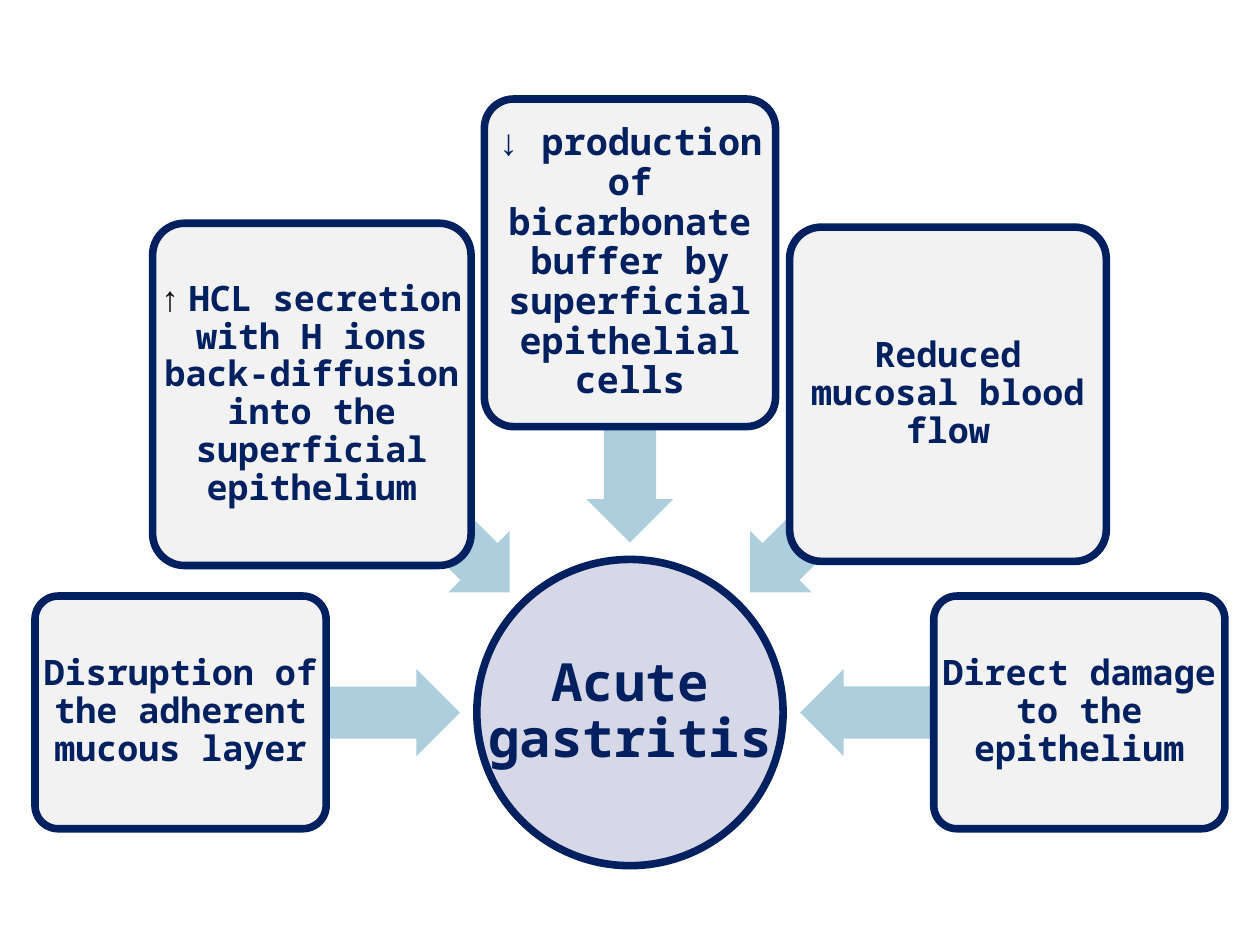
from math import cos, radians, sin

from pptx import Presentation
from pptx.dml.color import RGBColor
from pptx.enum.shapes import MSO_SHAPE
from pptx.enum.text import MSO_ANCHOR, PP_ALIGN
from pptx.util import Pt

ELLIPSE, ROUND_RECT, ARROW = MSO_SHAPE.OVAL, MSO_SHAPE.ROUNDED_RECTANGLE, MSO_SHAPE.LEFT_ARROW
MIDDLE, CENTER = MSO_ANCHOR.MIDDLE, PP_ALIGN.CENTER

COLORS = {"navy": "002060", "hub": "D7D8E7", "box": "F2F2F2", "arrow": "ADCEDC", "ink": "0D0D0D"}
MONO = "Noto Sans Mono"

HUB_X, HUB_Y, HUB_SIZE = 360, 407.2, 175
ARROW_W, ARROW_H, ARROW_RADIUS = 159.8, 49.7, 177.1

# angle around the hub, box (left, top, width, height), runs (text, size, font, colour)
CAUSES = [
    (180, (20, 340.6, 166.4, 133),
     [("Disruption of the adherent mucous layer", 20, MONO, "navy")]),
    (225, (87.2, 127.6, 182, 195.6),
     [("↑ ", 20, "Arial", "ink"),
      ("HCL secretion with H ions back-diffusion into the superficial epithelium", 20, MONO, "navy")]),
    (270, (276.8, 56.6, 166.4, 187.2),
     [("↓ production of bicarbonate buffer by superficial epithelial cells", 21, MONO, "navy")]),
    (315, (451.2, 129.8, 181, 191),
     [("Reduced mucosal blood flow", 20, MONO, "navy")]),
    (0, (533.6, 340.6, 166.4, 133),
     [("Direct damage to the epithelium", 20, MONO, "navy")]),
]


def add_shape(kind, box, fill, adjustments=(), outlined=True):
    sp = s.shapes.add_shape(kind, *map(Pt, box))
    sp.shadow.inherit = False
    sp.fill.solid()
    sp.fill.fore_color.rgb = RGBColor.from_string(COLORS[fill])
    for i, value in enumerate(adjustments):
        sp.adjustments[i] = value
    if outlined:
        sp.line.color.rgb = RGBColor.from_string(COLORS["navy"])
        sp.line.width = Pt(4.33)
    else:
        sp.line.fill.background()
    return sp


def add_label(box, runs, inset):
    tf = s.shapes.add_textbox(*map(Pt, box)).text_frame
    frame_format = {"word_wrap": True, "vertical_anchor": MIDDLE}
    frame_format.update({f"margin_{side}": Pt(inset) for side in ("left", "top", "right", "bottom")})
    for name, value in frame_format.items():
        setattr(tf, name, value)
    p = tf.paragraphs[0]
    p.alignment = CENTER
    p.line_spacing = 0.9
    for text, size, font, color in runs:
        r = p.add_run()
        r.text = text
        for name, value in {"size": Pt(size), "name": font, "bold": True}.items():
            setattr(r.font, name, value)
        r.font.color.rgb = RGBColor.from_string(COLORS[color])


prs = Presentation()
prs.slide_width, prs.slide_height = Pt(720), Pt(540)
s = prs.slides.add_slide(prs.slide_layouts[6])

hub_box = (HUB_X - HUB_SIZE / 2, HUB_Y - HUB_SIZE / 2, HUB_SIZE, HUB_SIZE)
add_shape(ELLIPSE, hub_box, "hub")
add_label(hub_box, [("Acute gastritis", 30, MONO, "navy")], 1.5)

for angle, box, runs in CAUSES:
    x = HUB_X + ARROW_RADIUS * cos(radians(angle))
    y = HUB_Y + ARROW_RADIUS * sin(radians(angle))
    arrow_box = (x - ARROW_W / 2, y - ARROW_H / 2, ARROW_W, ARROW_H)
    arrow = add_shape(ARROW, arrow_box, "arrow", (0.6, 0.5), outlined=False)
    arrow.rotation = angle
    add_shape(ROUND_RECT, box, "box", (0.1,))
    add_label(box, runs, 2.7)

prs.save("out.pptx")
